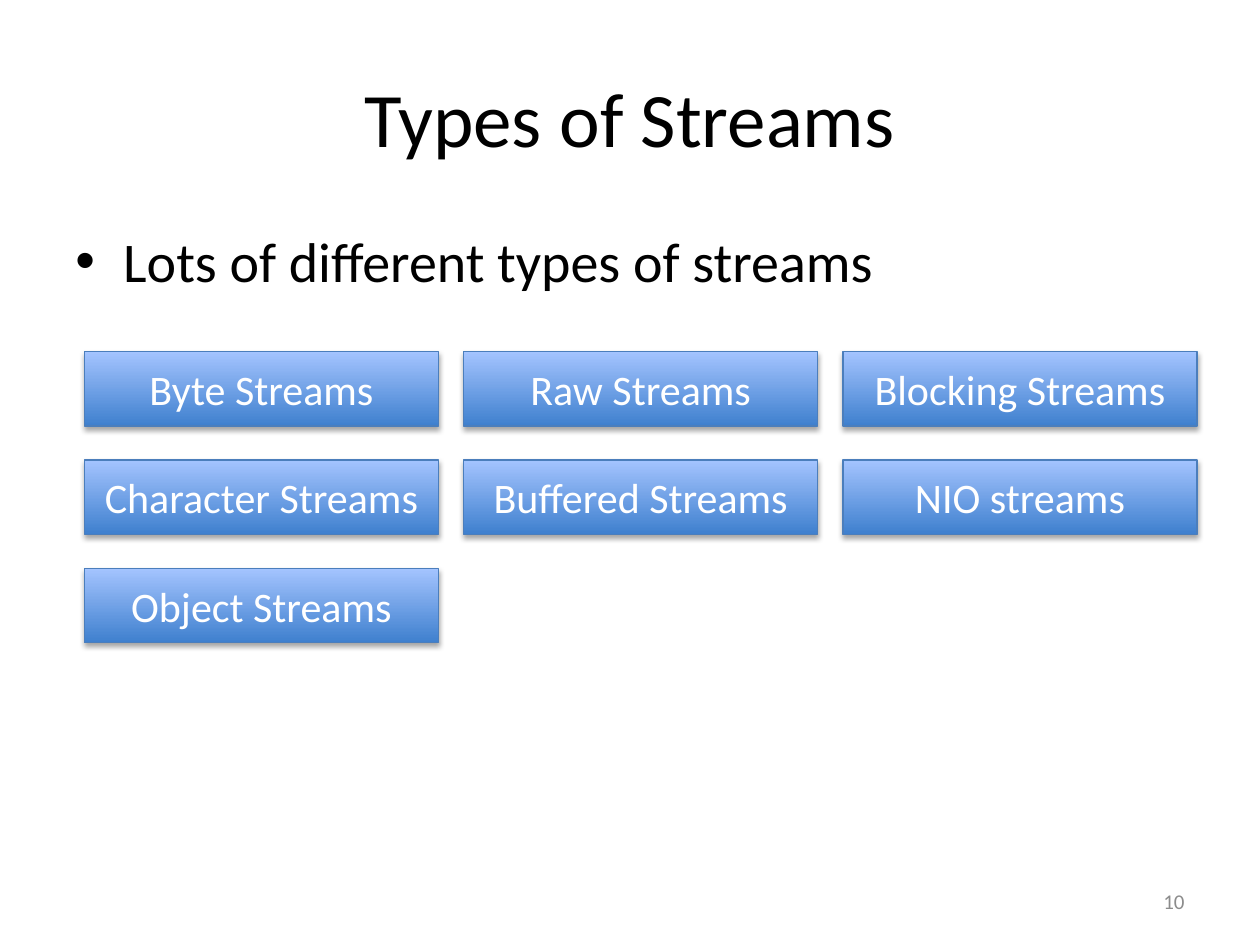
"""Build the "Types of Streams" slide: a title, one bullet and a grid of stream kinds."""
from lxml.etree import SubElement
from pptx import Presentation
from pptx.dml.color import RGBColor
from pptx.enum.shapes import MSO_SHAPE
from pptx.enum.text import MSO_ANCHOR as ANCHOR, PP_ALIGN as ALIGN
from pptx.oxml.ns import qn
from pptx.util import Inches, Pt

TITLE = "Types of Streams"
BULLET = "Lots of different types of streams"
PAGE = "10"
STREAMS = [
    ["Byte Streams", "Raw Streams", "Blocking Streams"],
    ["Character Streams", "Buffered Streams", "NIO streams"],
    ["Object Streams"],
]

FONT = "Calibri"
BLACK = RGBColor(0x00, 0x00, 0x00)
WHITE = RGBColor(0xFF, 0xFF, 0xFF)
GRAY = RGBColor(0x8C, 0x8C, 0x8C)
DARK_BLUE = RGBColor(0x3F, 0x80, 0xCE)
LIGHT_BLUE = RGBColor(0xA4, 0xC4, 0xFF)
EDGE_BLUE = RGBColor(0x4B, 0x7E, 0xBC)

MARGIN, BODY_W = 0.5, 9
GRID_X, GRID_Y = 0.67, 2.79
COL_STEP, ROW_STEP = 3.01, 0.86
BOX_W, BOX_H = 2.81, 0.59


def put_text(sp, text, size=24, color=BLACK, align=ALIGN.LEFT, anchor=ANCHOR.MIDDLE):
    tf = sp.text_frame
    tf.word_wrap = True
    tf.vertical_anchor = anchor
    p = tf.paragraphs[0]
    p.alignment = align
    r = p.add_run()
    r.text = text
    r.font.name, r.font.size = FONT, Pt(size)
    r.font.color.rgb = color
    return p


def add_box(s, x, y, w, h, text, **fmt):
    sp = s.shapes.add_textbox(Inches(x), Inches(y), Inches(w), Inches(h))
    return put_text(sp, text, **fmt)


def add_bullet(p, indent):
    p.space_before = Pt(6.4)
    pPr = p._p.get_or_add_pPr()
    pPr.set("marL", str(Inches(indent)))
    pPr.set("indent", str(-Inches(indent)))
    SubElement(pPr, qn("a:buFont"), typeface="Arial")
    SubElement(pPr, qn("a:buChar"), char="•")


def add_shadow(sp):
    sp.shadow.inherit = False
    effects = sp._element.spPr.find(qn("a:effectLst"))
    shadow = SubElement(effects, qn("a:outerShdw"), blurRad=str(Pt(3.1)), dist=str(Pt(1.8)),
                        dir="5400000", rotWithShape="0")
    color = SubElement(shadow, qn("a:srgbClr"), val="000000")
    SubElement(color, qn("a:alpha"), val="35000")


def add_stream(s, col, row, text):
    sp = s.shapes.add_shape(
        MSO_SHAPE.RECTANGLE, Inches(GRID_X + col * COL_STEP), Inches(GRID_Y + row * ROW_STEP),
        Inches(BOX_W), Inches(BOX_H))
    sp.fill.gradient()
    sp.fill.gradient_angle = 90
    for stop, color, at in zip(sp.fill.gradient_stops, (DARK_BLUE, LIGHT_BLUE), (0, 1)):
        stop.color.rgb, stop.position = color, at
    sp.line.color.rgb, sp.line.width = EDGE_BLUE, Pt(0.75)
    add_shadow(sp)
    put_text(sp, text, color=WHITE, align=ALIGN.CENTER)


def main():
    prs = Presentation()
    prs.slide_width, prs.slide_height = Inches(10), Inches(7.5)
    s = prs.slides.add_slide(prs.slide_layouts[6])
    add_box(s, MARGIN, 0.3, BODY_W, 1.25, TITLE, size=44, align=ALIGN.CENTER)
    add_bullet(add_box(s, MARGIN, 1.75, BODY_W, 4.95, BULLET, size=32, anchor=ANCHOR.TOP), 0.38)
    add_box(s, 7.17, 6.95, 2.33, 0.4, PAGE, size=12, color=GRAY, align=ALIGN.RIGHT)
    for row, names in enumerate(STREAMS):
        for col, name in enumerate(names):
            add_stream(s, col, row, name)
    prs.save("out.pptx")


if __name__ == "__main__":
    main()
